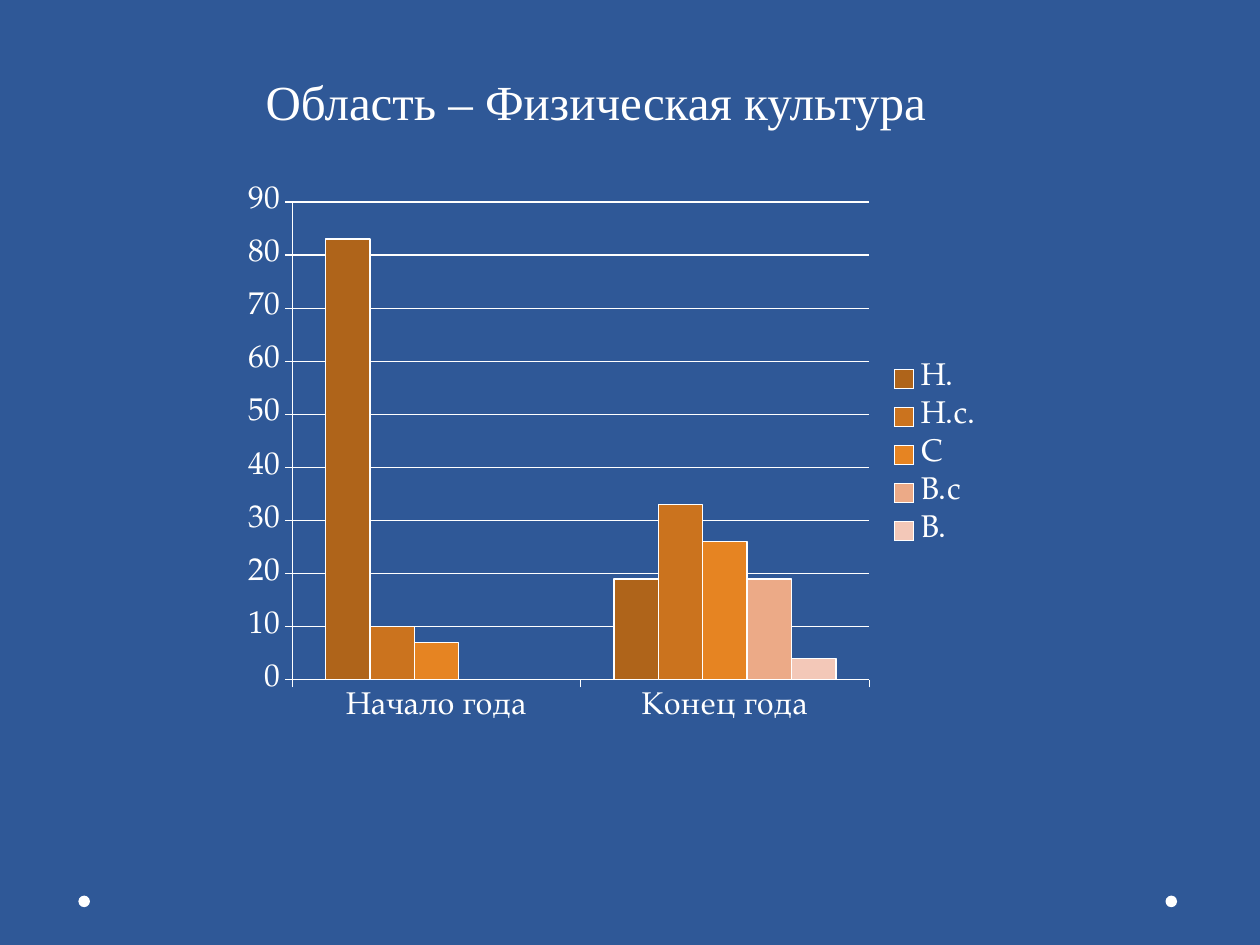
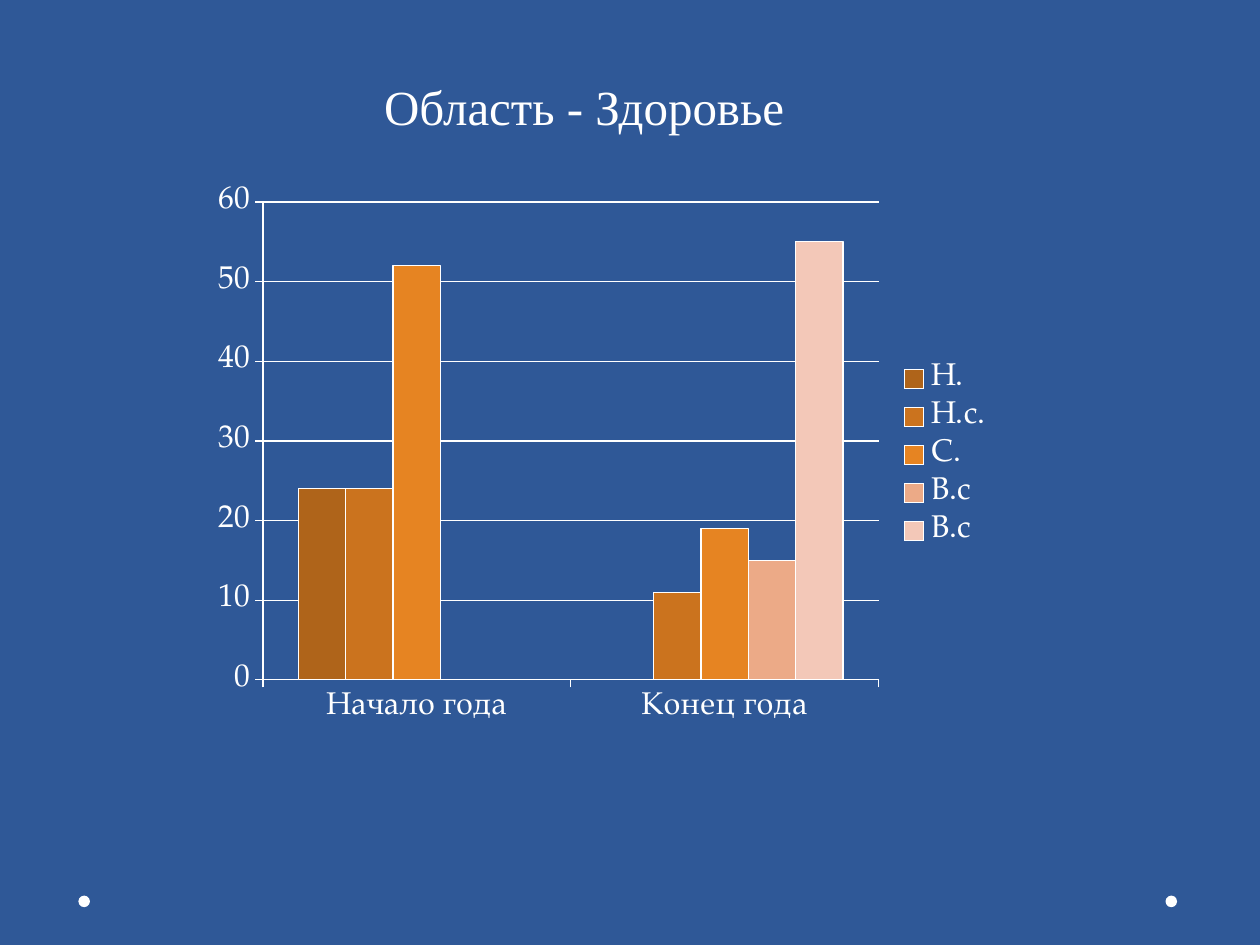
from dataclasses import dataclass

from pptx import Presentation
from pptx.chart.data import CategoryChartData
from pptx.dml.color import RGBColor
from pptx.enum.chart import XL_CHART_TYPE, XL_LEGEND_POSITION, XL_TICK_MARK
from pptx.enum.shapes import MSO_SHAPE
from pptx.util import Pt

COLUMNS = XL_CHART_TYPE.COLUMN_CLUSTERED
LEGEND_RIGHT = XL_LEGEND_POSITION.RIGHT
TICK_OUTSIDE = XL_TICK_MARK.OUTSIDE
OVAL = MSO_SHAPE.OVAL

PERIODS = ("Начало года", "Конец года")
PAGES = [
    {
        "title": "Область – Физическая культура",
        "title_place": (144.7, 37.4, 434.9, 41.2),
        "wrap": True,
        "chart_left": 133.2,
        "chart_width": 436.3,
        "scale_top": 90,
        "levels": [
            ("Н.", (83, 19)),
            ("Н.с.", (10, 33)),
            ("С", (7, 26)),
            ("В.с", (0, 19)),
            ("В.", (0, 4)),
        ],
    },
    {
        "title": "Область - Здоровье",
        "title_place": (212.4, 40.3, 245.5, 41.2),
        "wrap": False,
        "chart_left": 115.9,
        "chart_width": 459.4,
        "scale_top": 60,
        "levels": [
            ("Н.", (24, 0)),
            ("Н.с.", (24, 11)),
            ("С.", (52, 19)),
            ("В.с", (0, 15)),
            ("В.с", (0, 55)),
        ],
    },
]


@dataclass(frozen=True)
class Theme:
    background: str = "2F5897"
    ink: str = "FFFFFF"
    levels: tuple = ("AF641A", "CB731E", "E68422", "ECAA87", "F3C8B8")
    title_font: str = "Times New Roman"
    chart_font: str = "TeX Gyre Pagella"
    title_size: int = 28
    chart_size: int = 18
    line_width: float = 0.75


THEME = Theme()
PAGE_WIDTH, PAGE_HEIGHT = 720, 540
CHART_TOP, CHART_HEIGHT = 100, 320
DOT_SIZE, DOT_TOP = 6.6, 511.8
DOT_LEFTS = (44.8, 666)
TITLE_FORMAT = {"name": THEME.title_font, "size": Pt(THEME.title_size)}
CHART_FORMAT = {"name": THEME.chart_font, "size": Pt(THEME.chart_size)}
STEP = 10


def apply_format(target, values):
    for name, value in values.items():
        setattr(target, name, value)


def style_font(font, values):
    apply_format(font, values)
    font.color.rgb = RGBColor.from_string(THEME.ink)


def paint(fill, color):
    fill.solid()
    fill.fore_color.rgb = RGBColor.from_string(color)


def style_line(line):
    line.color.rgb = RGBColor.from_string(THEME.ink)
    line.width = Pt(THEME.line_width)


def add_base(page):
    paint(page.background.fill, THEME.background)
    for left in DOT_LEFTS:
        dot = page.shapes.add_shape(
            OVAL, Pt(left), Pt(DOT_TOP), Pt(DOT_SIZE), Pt(DOT_SIZE)
        )
        dot.shadow.inherit = False
        paint(dot.fill, THEME.ink)
        dot.line.fill.background()


def add_title(page, content):
    box = page.shapes.add_textbox(*map(Pt, content["title_place"]))
    box.text_frame.word_wrap = content["wrap"]
    span = box.text_frame.paragraphs[0].add_run()
    span.text = content["title"]
    style_font(span.font, TITLE_FORMAT)


def add_level_chart(page, content):
    data = CategoryChartData()
    data.categories = PERIODS
    for name, values in content["levels"]:
        data.add_series(name, values)
    place = (content["chart_left"], CHART_TOP, content["chart_width"], CHART_HEIGHT)
    chart = page.shapes.add_chart(COLUMNS, *map(Pt, place), data).chart
    style_font(chart.font, CHART_FORMAT)
    apply_format(chart, {"has_title": False, "has_legend": True})
    apply_format(
        chart.legend, {"position": LEGEND_RIGHT, "include_in_layout": False}
    )

    plot = chart.plots[0]
    apply_format(plot, {"gap_width": 150, "overlap": 0, "vary_by_categories": False})
    for series, color in zip(plot.series, THEME.levels):
        paint(series.format.fill, color)
        style_line(series.format.line)

    for axis in (chart.category_axis, chart.value_axis):
        axis.major_tick_mark = TICK_OUTSIDE
        style_line(axis.format.line)
    scale = {
        "minimum_scale": 0,
        "maximum_scale": content["scale_top"],
        "major_unit": STEP,
        "has_major_gridlines": True,
    }
    apply_format(chart.value_axis, scale)
    style_line(chart.value_axis.major_gridlines.format.line)


def main():
    deck = Presentation()
    deck.slide_width, deck.slide_height = Pt(PAGE_WIDTH), Pt(PAGE_HEIGHT)
    for content in PAGES:
        page = deck.slides.add_slide(deck.slide_layouts[6])
        add_base(page)
        add_level_chart(page, content)
        add_title(page, content)
    deck.save("out.pptx")


if __name__ == "__main__":
    main()
